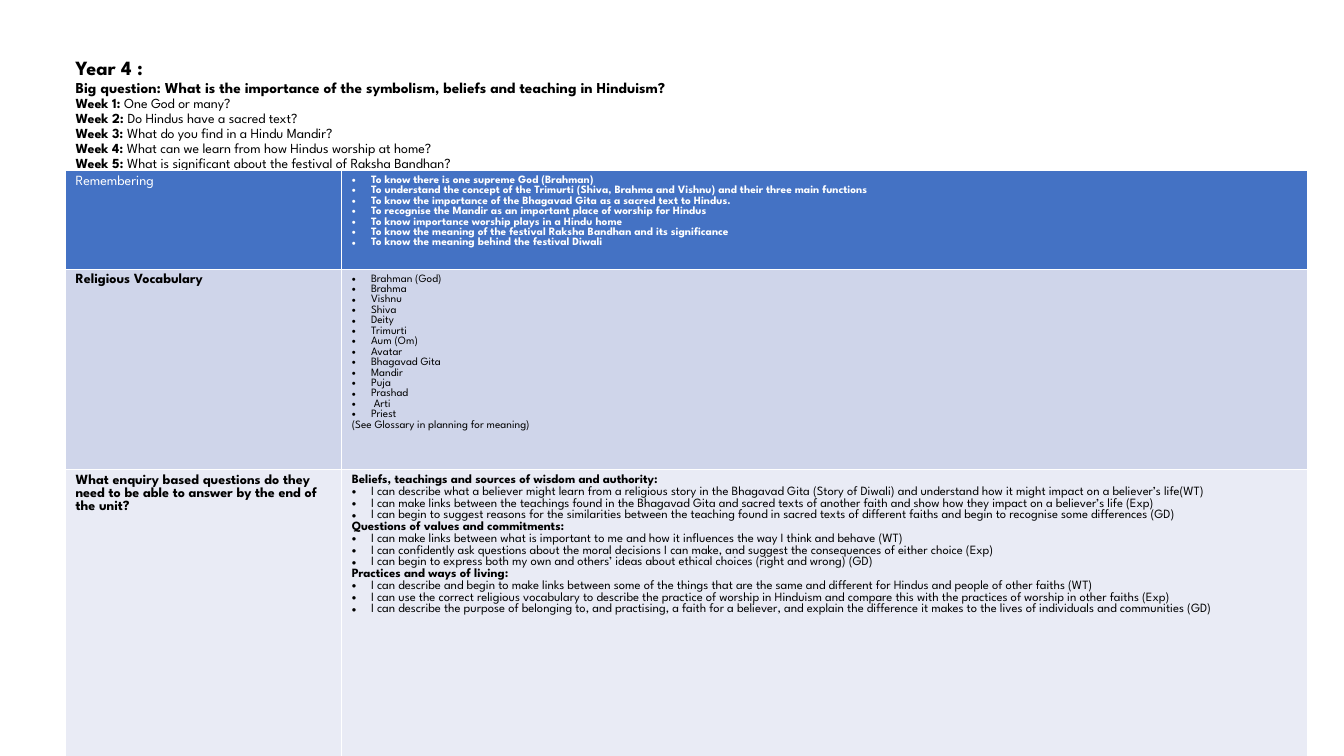
from dataclasses import dataclass

from lxml.etree import SubElement
from pptx import Presentation
from pptx.dml.color import RGBColor
from pptx.enum.text import MSO_ANCHOR, MSO_AUTO_SIZE, PP_ALIGN
from pptx.oxml import parse_xml
from pptx.oxml.ns import nsdecls, qn
from pptx.util import Inches, Pt


@dataclass(frozen=True)
class Theme:
    font: str = "League Spartan"
    black: str = "000000"
    white: str = "FFFFFF"
    header_fill: str = "4472C4"
    vocabulary_fill: str = "CFD5EA"
    enquiry_fill: str = "E9EBF5"
    year_size: float = 14.4
    question_size: float = 10.8
    week_size: float = 9.9
    label_size: float = 10
    list_size: float = 8
    enquiry_size: float = 9


THEME = Theme()
SLIDE_WIDTH, SLIDE_HEIGHT = 13.33, 7.5
LEFT = 0.65
TITLE_TOP, TITLE_WIDTH, TITLE_HEIGHT = 0.18, 11.25, 2.31
TITLE_INSET = 0.37
TABLE_TOP = 1.69
COLUMNS = (2.74, 9.58)
ROWS = (0.98, 1.99, 2.95)
BULLET_INDENT = 0.19

WEEKS = (
    "One God or many?",
    "Do Hindus have a sacred text?",
    "What do you find in a Hindu Mandir?",
    "What can we learn from how Hindus worship at home?",
    "What is significant about the festival of Raksha Bandhan?",
)
KNOWLEDGE = (
    "To know there is one supreme God (Brahman)",
    "To understand the concept of the Trimurti (Shiva, Brahma and Vishnu) and their three main functions",
    "To know the importance of the Bhagavad Gita as a sacred text to Hindus.",
    "To recognise the Mandir as an important place of worship for Hindus",
    "To know importance worship plays in a Hindu home",
    "To know the meaning of the festival Raksha Bandhan and its significance",
    "To know the meaning behind the festival Diwali",
)
VOCABULARY = (
    "Brahman (God)", "Brahma", "Vishnu", "Shiva", "Deity", "Trimurti", "Aum (Om)",
    "Avatar", "Bhagavad Gita", "Mandir", "Puja", "Prashad", " Arti", "Priest",
)
GLOSSARY_NOTE = "(See Glossary in planning for meaning)"
ENQUIRY = {
    "Beliefs, teachings and sources of wisdom and authority:": (
        "I can describe what a believer might learn from a religious story in the Bhagavad Gita "
        "(Story of Diwali) and understand how it might impact on a believer’s life(WT)",
        "I can make links between the teachings found in the Bhagavad Gita and sacred texts of "
        "another faith and show how they impact on a believer’s life (Exp)",
        "I can begin to suggest reasons for the similarities between the teaching found in sacred "
        "texts of different faiths and begin to recognise some differences (GD)",
    ),
    "Questions of values and commitments:": (
        "I can make links between what is important to me and how it influences the way I think "
        "and behave (WT)",
        "I can confidently ask questions about the moral decisions I can make, and suggest the "
        "consequences of either choice (Exp)",
        "I can begin to express both my own and others’ ideas about ethical choices (right and "
        "wrong) (GD)",
    ),
    "Practices and ways of living:": (
        "I can describe and begin to make links between some of the things that are the same and "
        "different for Hindus and people of other faiths (WT)",
        "I can use the correct religious vocabulary to describe the practice of worship in Hinduism "
        "and compare this with the practices of worship in other faiths (Exp)",
        "I can describe the purpose of belonging to, and practising, a faith for a believer, and "
        "explain the difference it makes to the lives of individuals and communities (GD)",
    ),
}


@dataclass(frozen=True)
class Line:
    text: str
    bold: bool = False
    bullet: bool = False


def style_run(run, size, bold, color=THEME.black):
    run.font.name = THEME.font
    run.font.size = Pt(size)
    run.font.bold = bold
    run.font.color.rgb = RGBColor.from_string(color)


def paragraph_at(frame, index):
    return frame.paragraphs[0] if index == 0 else frame.add_paragraph()


def add_bullet(paragraph):
    properties = paragraph._p.get_or_add_pPr()
    properties.set("marL", str(Inches(BULLET_INDENT)))
    properties.set("indent", str(-Inches(BULLET_INDENT)))
    SubElement(properties, qn("a:buFont")).set("typeface", "Arial")
    SubElement(properties, qn("a:buChar")).set("char", "•")


def set_borders(cell):
    """Draw white cell edges, which must precede the fill in the cell properties."""
    properties = cell._tc.get_or_add_tcPr()
    for position, edge in enumerate(("lnL", "lnR", "lnT", "lnB")):
        properties.insert(position, parse_xml(
            f'<a:{edge} {nsdecls("a")} w="{Pt(1)}"><a:solidFill>'
            f'<a:srgbClr val="{THEME.white}"/></a:solidFill></a:{edge}>'))


def fill_cell(cell, lines, size, fill, color):
    cell.fill.solid()
    cell.fill.fore_color.rgb = RGBColor.from_string(fill)
    set_borders(cell)
    for index, line in enumerate(lines):
        paragraph = paragraph_at(cell.text_frame, index)
        paragraph.text = line.text
        style_run(paragraph.runs[0], size, line.bold, color)
        if line.bullet:
            add_bullet(paragraph)


def add_heading(slide):
    title = slide.shapes.title
    title.left, title.top = Inches(LEFT), Inches(TITLE_TOP)
    title.width, title.height = Inches(TITLE_WIDTH), Inches(TITLE_HEIGHT)
    frame = title.text_frame
    frame.word_wrap = True
    frame.auto_size = MSO_AUTO_SIZE.NONE
    frame.vertical_anchor = MSO_ANCHOR.TOP
    frame.margin_top = Inches(TITLE_INSET)
    lines = [
        ("Year 4 :", "", THEME.year_size, 17),
        ("Big question: What is the importance of the symbolism, beliefs and teaching in Hinduism?",
         "", THEME.question_size, 12),
    ]
    lines += [(f"Week {number}: ", topic, THEME.week_size, 10.7)
              for number, topic in enumerate(WEEKS, 1)]
    for index, (label, topic, size, spacing) in enumerate(lines):
        paragraph = paragraph_at(frame, index)
        paragraph.text = label
        paragraph.alignment = PP_ALIGN.LEFT
        paragraph.line_spacing = Pt(spacing)
        paragraph.space_before = Pt(0)
        style_run(paragraph.runs[0], size, True)
        if topic:
            topic_run = paragraph.add_run()
            topic_run.text = topic
            style_run(topic_run, size, False)


def add_unit_table(slide):
    table = slide.shapes.add_table(
        len(ROWS), len(COLUMNS), Inches(LEFT), Inches(TABLE_TOP),
        Inches(sum(COLUMNS)), Inches(sum(ROWS))).table
    for column, width in zip(table.columns, COLUMNS):
        column.width = Inches(width)
    for row, height in zip(table.rows, ROWS):
        row.height = Inches(height)

    knowledge = [Line(text, bold=True, bullet=True) for text in KNOWLEDGE]
    vocabulary = [Line(word, bullet=True) for word in VOCABULARY] + [Line(GLOSSARY_NOTE)]
    enquiry = []
    for strand, statements in ENQUIRY.items():
        enquiry.append(Line(strand, bold=True))
        enquiry += [Line(statement, bullet=True) for statement in statements]
    enquiry_label = ("What enquiry based questions do they need to be able to answer "
                     "by the end of the unit?")
    sections = (
        (Line("Remembering"), knowledge, THEME.list_size, THEME.header_fill, THEME.white),
        (Line("Religious Vocabulary", bold=True), vocabulary, THEME.list_size,
         THEME.vocabulary_fill, THEME.black),
        (Line(enquiry_label, bold=True), enquiry, THEME.enquiry_size,
         THEME.enquiry_fill, THEME.black),
    )
    for row, (label, lines, size, fill, color) in enumerate(sections):
        fill_cell(table.cell(row, 0), [label], THEME.label_size, fill, color)
        fill_cell(table.cell(row, 1), lines, size, fill, color)


def main():
    deck = Presentation()
    deck.slide_width, deck.slide_height = Inches(SLIDE_WIDTH), Inches(SLIDE_HEIGHT)
    slide = deck.slides.add_slide(deck.slide_layouts[5])
    add_heading(slide)
    add_unit_table(slide)
    deck.save("out.pptx")


if __name__ == "__main__":
    main()
